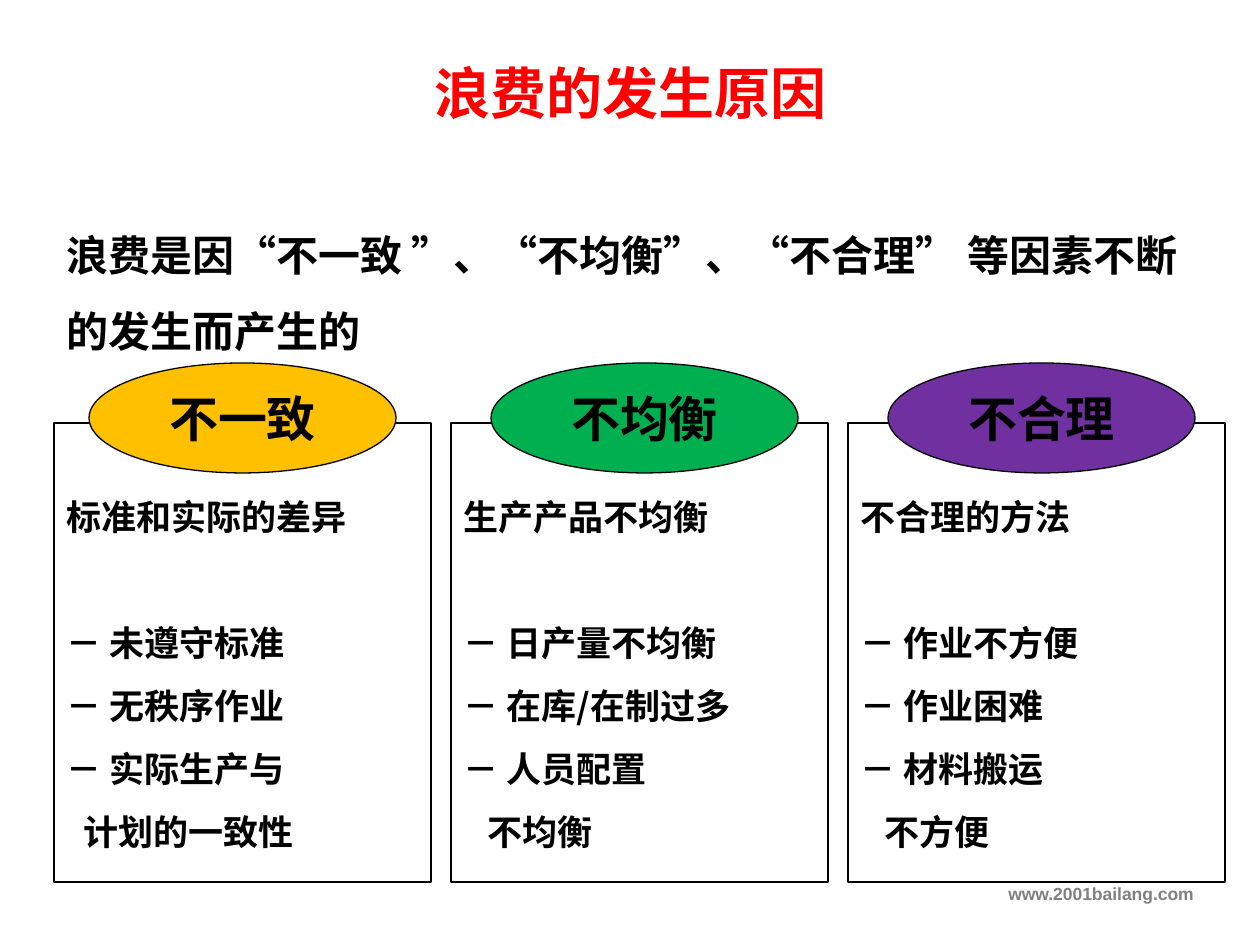
"""Build the slide on the three causes of waste."""
import pptx
import pptx.util
import pptx.dml.color
import pptx.enum.shapes
import pptx.enum.text
from lxml import etree

PX = 914400 // 126
CJK = "Noto Sans CJK SC"
COLORS = {"black": "000000", "white": "FFFFFF", "red": "FF0000", "grey": "808080",
          "amber": "FFC000", "green": "00B050", "purple": "7030A0"}
ALIGN = pptx.enum.text.PP_ALIGN
ANCHOR = pptx.enum.text.MSO_ANCHOR
SHAPE = pptx.enum.shapes.MSO_SHAPE

TITLE = "浪费的发生原因"
INTRO = "浪费是因“不一致 ”、“不均衡”、“不合理” 等因素不断的发生而产生的"
SITE = "www.2001bailang.com"
CAUSES = [
    {"name": "不一致", "color": "amber", "oval_dx": 35, "indent": 17,
     "lines": ["标准和实际的差异", "－ 未遵守标准", "－ 无秩序作业", "－ 实际生产与", "计划的一致性"]},
    {"name": "不均衡", "color": "green", "oval_dx": 40, "indent": 24,
     "lines": ["生产产品不均衡", "－ 日产量不均衡", "－ 在库/在制过多", "－ 人员配置", "不均衡"]},
    {"name": "不合理", "color": "purple", "oval_dx": 40, "indent": 24,
     "lines": ["不合理的方法", "－ 作业不方便", "－ 作业困难", "－ 材料搬运", "不方便"]},
]
COL_X, COL_Y, COL_W, COL_H, COL_STEP = 54, 423, 377, 459, 397
OVAL_Y, OVAL_W, OVAL_H = 363, 307, 110


def rgb(name):
    return pptx.dml.color.RGBColor.from_string(COLORS[name])


def write(sp, lines, size, color="black", font=CJK, align=ALIGN.LEFT,
          anchor=ANCHOR.TOP, wrap=True, pitch=None, top=6):
    tf = sp.text_frame
    tf.text = "\n".join(lines)
    tf.word_wrap = wrap
    tf.vertical_anchor = anchor
    tf.margin_top = top * PX
    for p in tf.paragraphs:
        p.alignment = align
        if pitch:
            p.line_spacing = pptx.util.Pt(pitch)
        for r in p.runs:
            r.font.size = pptx.util.Pt(size)
            r.font.bold = True
            r.font.name = font
            r.font.color.rgb = rgb(color)
            ea = etree.SubElement(r.font._element, pptx.oxml.ns.qn("a:ea"))
            ea.set("typeface", font)
    return tf


def add_text(s, box, lines, size, **style):
    sp = s.shapes.add_textbox(*(v * PX for v in box))
    return write(sp, lines, size, **style)


def add_shape(s, kind, box, fill):
    sp = s.shapes.add_shape(kind, *(v * PX for v in box))
    sp.shadow.inherit = False
    sp.fill.solid()
    sp.fill.fore_color.rgb = rgb(fill)
    sp.line.color.rgb = rgb("black")
    sp.line.width = pptx.util.Pt(0.75)
    return sp


def add_cause(s, x, cause):
    sp = add_shape(s, SHAPE.RECTANGLE, (x, COL_Y, COL_W, COL_H), "white")
    tf = write(sp, cause["lines"], 20, wrap=False, pitch=36, top=52)
    tf.paragraphs[1].space_before = pptx.util.Pt(36)
    tf.paragraphs[-1]._p.get_or_add_pPr().set("marL", str(cause["indent"] * PX))
    oval = add_shape(s, SHAPE.OVAL, (x + cause["oval_dx"], OVAL_Y, OVAL_W, OVAL_H),
                     cause["color"])
    write(oval, [cause["name"]], 28, align=ALIGN.CENTER, anchor=ANCHOR.MIDDLE, wrap=False)


def main():
    prs = pptx.Presentation()
    prs.slide_width, prs.slide_height = 1260 * PX, 945 * PX
    s = prs.slides.add_slide(prs.slide_layouts[6])
    add_text(s, (0, 877, 1206, 44), [SITE], 10, color="grey", font="Arial", align=ALIGN.RIGHT)
    add_text(s, (54, 195, 1160, 165), [INTRO], 24, pitch=43, top=10)
    for i, cause in enumerate(CAUSES):
        add_cause(s, COL_X + i * COL_STEP, cause)
    add_text(s, (412, 52, 437, 81), [TITLE], 32, color="red", align=ALIGN.CENTER,
             anchor=ANCHOR.MIDDLE)
    prs.save("out.pptx")


if __name__ == "__main__":
    main()
